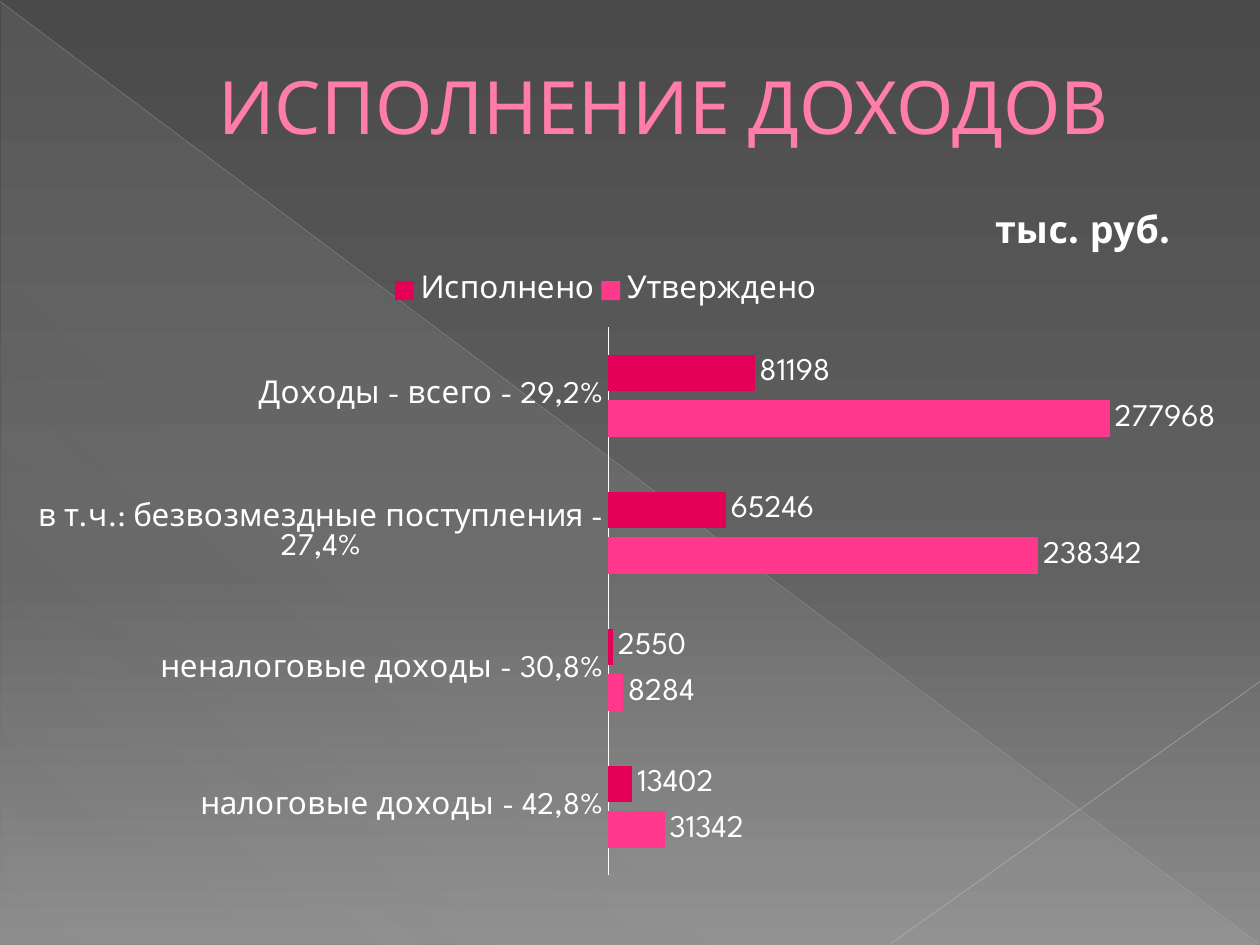
from lxml import etree
from pptx import Presentation
from pptx import util as u
from pptx.chart.data import CategoryChartData
from pptx.dml.color import RGBColor
from pptx.enum import chart as ch, shapes, text
from pptx.oxml.ns import qn

WHITE = RGBColor(0xFF, 0xFF, 0xFF)
TITLE_PINK = RGBColor(0xFF, 0x7D, 0xA7)
TITLE_EDGE = RGBColor(0xB1, 0x27, 0x61)
APPROVED_PINK = RGBColor(0xFF, 0x38, 0x8C)
EXECUTED_RED = RGBColor(0xE4, 0x00, 0x59)
GREY_TOP = RGBColor(0x4A, 0x4A, 0x4A)
GREY_MIDDLE = RGBColor(0x62, 0x62, 0x62)
GREY_BOTTOM = RGBColor(0x8C, 0x8C, 0x8C)
HAZE = RGBColor(0xD2, 0xD2, 0xD2)
DIAGONAL = RGBColor(0xBF, 0xBF, 0xBF)
CORNER = RGBColor(0xC6, 0xC6, 0xC6)
FONT = "League Spartan"


def apply(target, **values):
    """Set each given value as an attribute of the target."""
    for name, value in values.items():
        setattr(target, name, value)


def add_color(parent, color, opacity=100):
    """Append an RGB colour with an opacity in percent."""
    node = etree.SubElement(parent, qn("a:srgbClr"), val=str(color))
    if opacity < 100:
        etree.SubElement(node, qn("a:alpha"), val=str(opacity * 1000))


def set_gradient(fill, owner, angle, stops):
    """Give a fill a linear gradient with any number of stops."""
    fill.gradient()
    fill.gradient_angle = angle
    stop_list = owner.xpath(".//a:gradFill/a:gsLst")[0]
    for old in list(stop_list):
        stop_list.remove(old)
    for position, *color in stops:
        stop = etree.SubElement(stop_list, qn("a:gs"), pos=str(position * 1000))
        add_color(stop, *color)


def set_layout(parent, index, target=None, **fractions):
    """Place a chart part by fractions of the chart area."""
    layout = parent.find(qn("c:layout"))
    if layout is None:
        layout = etree.Element(qn("c:layout"))
        parent.insert(index, layout)
    manual = etree.SubElement(layout, qn("c:manualLayout"))
    if target:
        etree.SubElement(manual, qn("c:layoutTarget"), val=target)
    for side in ("xMode", "yMode"):
        etree.SubElement(manual, qn("c:" + side), val="edge")
    for name, value in fractions.items():
        etree.SubElement(manual, qn("c:" + name), val=str(value))


class IncomeSlide:
    """Holds the style and the current slide."""

    def __init__(self, deck):
        self.label_style = dict(name=FONT, size=u.Pt(18))
        self.heading_style = dict(name=FONT, size=u.Pt(42))
        self.slide = deck.slides.add_slide(deck.slide_layouts[5])

    def background(self, angle, stops):
        """Fill the slide background with a gradient."""
        set_gradient(self.slide.background.fill, self.slide._element, angle, stops)

    def triangle(self, box, angle, stops):
        """Add a translucent right triangle."""
        haze = self.slide.shapes.add_shape(
            shapes.MSO_SHAPE.RIGHT_TRIANGLE, *map(u.Cm, box))
        haze.shadow.inherit = False
        haze.line.fill.background()
        set_gradient(haze.fill, haze._element, angle, stops)

    def line(self, ends, color, width, opacity):
        """Add a thin translucent line."""
        stroke = self.slide.shapes.add_connector(
            shapes.MSO_CONNECTOR.STRAIGHT, *map(u.Cm, ends))
        stroke.line.width = u.Pt(width)
        stroke.line.color.rgb = color
        tint = stroke._element.xpath(".//a:ln//a:srgbClr")[0]
        etree.SubElement(tint, qn("a:alpha"), val=str(opacity * 1000))
        etree.SubElement(stroke._element.spPr, qn("a:effectLst"))

    def title(self, box, wording):
        """Fill the title placeholder and bring it to the front."""
        heading = self.slide.shapes.title
        apply(heading, **dict(zip(("left", "top", "width", "height"), map(u.Cm, box))))
        heading.text_frame.text = wording
        heading.text_frame.vertical_anchor = text.MSO_ANCHOR.MIDDLE
        paragraph = heading.text_frame.paragraphs[0]
        paragraph.alignment = text.PP_ALIGN.CENTER
        paragraph._p.get_or_add_pPr().set("marL", str(u.Cm(1.35)))
        run = paragraph.runs[0]
        apply(run.font, **self.heading_style)
        run.font.color.rgb = TITLE_PINK
        edge = etree.Element(qn("a:ln"), w=str(u.Pt(0.5)))
        add_color(etree.SubElement(edge, qn("a:solidFill")), TITLE_EDGE)
        run._r.get_or_add_rPr().insert(0, edge)
        self.slide.shapes._spTree.append(heading._element)

    def bar_chart(self, box, unit, categories, series):
        """Add the clustered bar chart with its unit as the title."""
        data = CategoryChartData()
        data.categories = categories
        for name, values, _ in series:
            data.add_series(name, values)
        chart = self.slide.shapes.add_chart(
            ch.XL_CHART_TYPE.BAR_CLUSTERED, *map(u.Cm, box), data).chart
        apply(chart.font, **self.label_style)
        chart.font.color.rgb = WHITE

        unit_text = chart.chart_title.text_frame
        unit_text.text = unit
        unit_font = unit_text.paragraphs[0].runs[0].font
        apply(unit_font, name=FONT, size=u.Pt(21.6), bold=True)
        unit_font.color.rgb = WHITE
        set_layout(chart.chart_title._element, 1, x=0.81, y=0.03)

        chart.has_legend = True
        apply(chart.legend, position=ch.XL_LEGEND_POSITION.TOP, include_in_layout=False)
        set_layout(chart.legend._element, 1, x=0.3, y=0.12, w=0.37, h=0.06)

        apply(chart.value_axis, visible=False, has_major_gridlines=False,
              minimum_scale=0, maximum_scale=300000)
        apply(chart.category_axis, major_tick_mark=ch.XL_TICK_MARK.NONE,
              has_major_gridlines=False)
        chart.category_axis.format.line.color.rgb = WHITE
        chart.category_axis.format.line.width = u.Pt(0.75)

        plot = chart.plots[0]
        apply(plot, gap_width=150, overlap=-25, vary_by_categories=False,
              has_data_labels=True)
        apply(plot.data_labels, show_value=True,
              position=ch.XL_LABEL_POSITION.OUTSIDE_END)
        for bars, (_, _, color) in zip(plot.series, series):
            bars.format.fill.solid()
            bars.format.fill.fore_color.rgb = color
        plot_area = chart._chartSpace.xpath(".//c:plotArea")[0]
        set_layout(plot_area, 0, "inner", x=0.487, y=0.202, w=0.46, h=0.778)


def main():
    """Build the slide on income execution."""
    deck = Presentation()
    apply(deck, slide_width=u.Cm(25.4), slide_height=u.Cm(19.05))
    page = IncomeSlide(deck)
    page.background(270, [(0, GREY_TOP), (60, GREY_MIDDLE), (100, GREY_BOTTOM)])
    page.triangle((0.03, 0.05, 25.35, 19), 227,
                  [(0, HAZE, 10), (70, HAZE, 8), (100, HAZE, 1)])
    page.line((0, 0.03, 25.37, 19.02), DIAGONAL, 0.39, 35)
    page.line((25.4, 13.74, 17.96, 19.02), CORNER, 0.47, 45)
    page.title((1.27, 0.74, 22.86, 2.77), "ИСПОЛНЕНИЕ ДОХОДОВ")
    page.bar_chart(
        (0.71, 3.73, 23.8, 14.2), "тыс. руб.",
        ["налоговые доходы - 42,8%", "неналоговые доходы - 30,8%",
         "в т.ч.: безвозмездные поступления - 27,4%", "Доходы - всего - 29,2%"],
        [("Утверждено", (31342, 8284, 238342, 277968), APPROVED_PINK),
         ("Исполнено", (13402, 2550, 65246, 81198), EXECUTED_RED)])
    deck.save("out.pptx")


if __name__ == "__main__":
    main()
